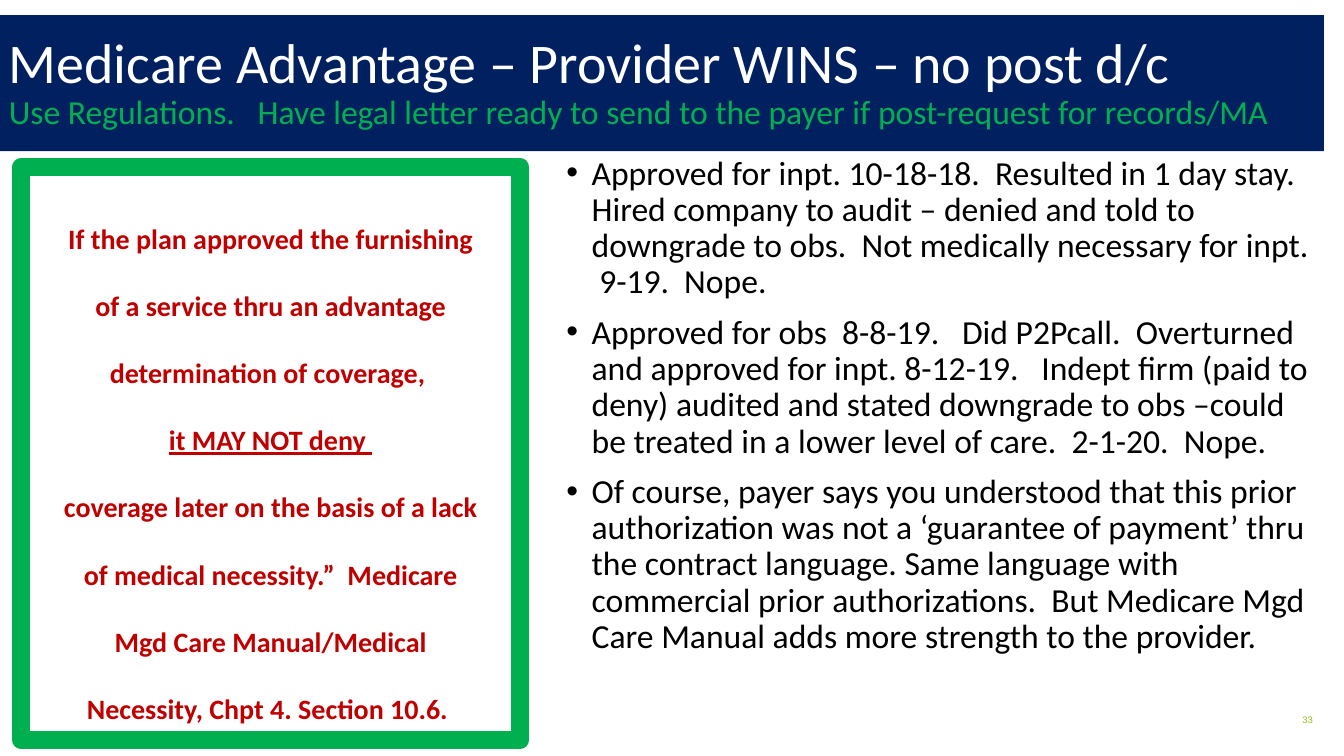
import pptx
import pptx.dml.color
import pptx.enum.shapes
import pptx.enum.text
import pptx.util
from dataclasses import dataclass
from lxml import etree

HEADING = "Medicare Advantage – Provider WINS – no post d/c"
SUBHEADING = ("Use Regulations.   Have legal letter ready to send to the payer "
              "if post-request for records/MA")
CASES = [
    "Approved for inpt. 10-18-18.  Resulted in 1 day stay.  Hired company to audit – "
    "denied and told to downgrade to obs.  Not medically necessary for inpt.  9-19.  Nope.",
    "Approved for obs  8-8-19.   Did P2Pcall.  Overturned and approved for inpt. 8-12-19.   "
    "Indept firm (paid to deny) audited and stated downgrade to obs –could be treated in a "
    "lower level of care.  2-1-20.  Nope.",
    "Of course, payer says you understood that this prior authorization was not a "
    "‘guarantee of payment’ thru the contract language. Same language with commercial prior "
    "authorizations.  But Medicare Mgd Care Manual adds more strength to the provider.",
]
# (text, underlined)
QUOTE = [
    ("If the plan approved the furnishing of a service thru an advantage "
     "determination of coverage, ", False),
    ("it MAY NOT deny ", True),
    ("coverage later on the basis of a lack of medical necessity.”  Medicare Mgd Care "
     "Manual/Medical Necessity, Chpt 4. Section 10.6. ", False),
]
PAGE_NUMBER = "33"

# left, top, width, height in px, 100 px to the inch
SLIDE = (1333, 750)
BANNER = (-1, 15, 1314, 135)
FRAME = (21, 166, 495, 568)
QUOTE_AREA = (45, 181, 447, 539)
CASES_AREA = (552, 150, 760, 570)
PAGE_AREA = (1012, 694, 300, 40)
BULLET_INDENT = 25


@dataclass(frozen=True)
class Theme:
    font: str = "Calibri"
    page_font: str = "Arial"
    navy: str = "002060"
    green: str = "00B050"
    red: str = "C00000"
    lime: str = "90C226"
    white: str = "FFFFFF"
    black: str = "000000"
    heading: float = 40
    body: float = 24
    quote: float = 20
    page: float = 6.8
    frame_line: float = 13


THEME = Theme()
ALIGN = pptx.enum.text.PP_ALIGN
MIDDLE = pptx.enum.text.MSO_ANCHOR.MIDDLE


def px(length):
    return pptx.util.Emu(length * 9144)


def rgb(colour):
    return pptx.dml.color.RGBColor.from_string(colour)


def add_run(paragraph, text, size, colour, font=THEME.font, bold=False, underline=False):
    run = paragraph.add_run()
    run.text = text
    run.font.size = pptx.util.Pt(size)
    run.font.name = font
    run.font.color.rgb = rgb(colour)
    run.font.bold = bold
    run.font.underline = underline


def add_rectangle(slide, area):
    rectangle = slide.shapes.add_shape(
        pptx.enum.shapes.MSO_SHAPE.RECTANGLE, *map(px, area))
    rectangle.shadow.inherit = False
    return rectangle


def add_text_area(slide, area):
    frame = slide.shapes.add_textbox(*map(px, area)).text_frame
    frame.word_wrap = True
    return frame


def paragraphs(frame, count):
    """Return the frame's first paragraph and as many new ones as count needs."""
    return [frame.paragraphs[0]] + [frame.add_paragraph() for _ in range(count - 1)]


def set_bullet(paragraph):
    properties = paragraph._p.get_or_add_pPr()
    properties.set("marL", str(px(BULLET_INDENT)))
    properties.set("indent", str(-px(BULLET_INDENT)))
    for tag, name, value in (("a:buFont", "typeface", "Arial"), ("a:buChar", "char", "•")):
        etree.SubElement(properties, pptx.oxml.ns.qn(tag)).set(name, value)


def add_page_number(slide):
    frame = add_text_area(slide, PAGE_AREA)
    frame.vertical_anchor = MIDDLE
    number = frame.paragraphs[0]
    number.alignment = ALIGN.RIGHT
    add_run(number, PAGE_NUMBER, THEME.page, THEME.lime, THEME.page_font)


def add_cases(slide):
    frame = add_text_area(slide, CASES_AREA)
    for case, text in zip(paragraphs(frame, len(CASES)), CASES):
        case.line_spacing = 0.9
        case.space_before = pptx.util.Pt(10)
        set_bullet(case)
        add_run(case, text, THEME.body, THEME.black)


def add_quote(slide):
    border = add_rectangle(slide, FRAME)
    border.fill.background()
    border.line.color.rgb = rgb(THEME.green)
    border.line.width = pptx.util.Pt(THEME.frame_line)
    frame = add_text_area(slide, QUOTE_AREA)
    for part, (text, underlined) in zip(paragraphs(frame, len(QUOTE)), QUOTE):
        part.alignment = ALIGN.CENTER
        part.line_spacing = 2.0
        add_run(part, text, THEME.quote, THEME.red, bold=True, underline=underlined)


def add_banner(slide):
    banner = add_rectangle(slide, BANNER)
    banner.fill.solid()
    banner.fill.fore_color.rgb = rgb(THEME.navy)
    banner.line.fill.background()
    banner.text_frame.word_wrap = True
    banner.text_frame.vertical_anchor = MIDDLE
    title = banner.text_frame.paragraphs[0]
    title.alignment = ALIGN.LEFT
    title.line_spacing = 0.9
    add_run(title, HEADING, THEME.heading, THEME.white)
    title.add_line_break()
    add_run(title, SUBHEADING, THEME.body, THEME.green)


def main():
    deck = pptx.Presentation()
    deck.slide_width, deck.slide_height = map(px, SLIDE)
    slide = deck.slides.add_slide(deck.slide_layouts[6])
    add_page_number(slide)
    add_cases(slide)
    add_quote(slide)
    add_banner(slide)
    deck.save("out.pptx")


if __name__ == "__main__":
    main()
